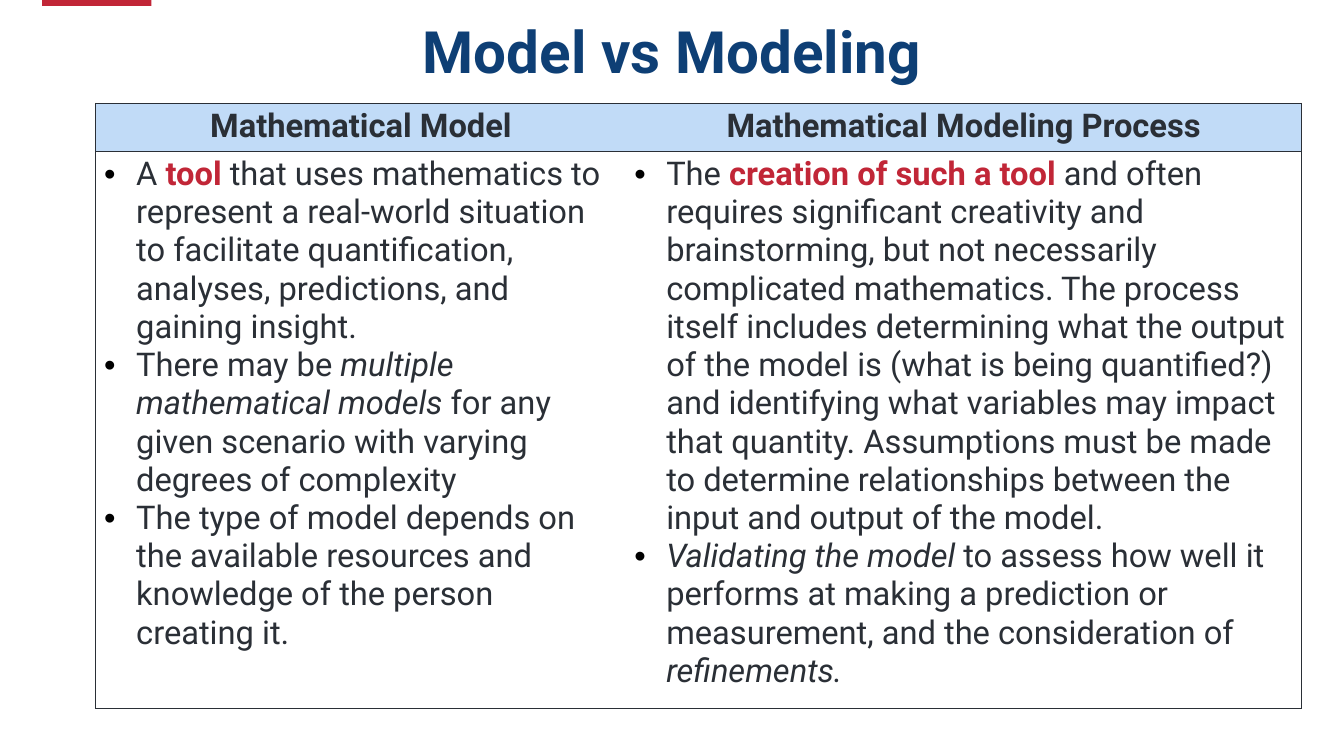
from dataclasses import dataclass

from lxml.etree import SubElement
from pptx import Presentation
from pptx.dml.color import RGBColor
from pptx.enum.shapes import MSO_SHAPE
from pptx.enum.text import MSO_ANCHOR, PP_ALIGN
from pptx.oxml.ns import qn
from pptx.slide import Slide
from pptx.table import _Cell
from pptx.text.text import _Paragraph
from pptx.util import Inches, Pt

SLIDE_WIDTH = Inches(16)
SLIDE_HEIGHT = Inches(9)


@dataclass(frozen=True)
class Theme:
    font: str = "Roboto"
    title_size: int = 50
    table_size: int = 28
    border_width: int = 1
    navy: str = "0E3F75"
    ink: str = "2A2F36"
    red: str = "C12637"
    header: str = "C1DBF7"
    white: str = "FFFFFF"
    bullet: str = "000000"


THEME = Theme()


@dataclass(frozen=True)
class Band:
    left: float
    top: float
    width: float
    height: float
    color: str


@dataclass(frozen=True)
class Phrase:
    text: str
    color: str = THEME.ink
    bold: bool = False
    italic: bool = False


@dataclass(frozen=True)
class Concept:
    heading: str
    width: float
    outer_side: str
    points: list[list[Phrase]]


BANDS = [
    Band(3.13, -0.56, 8.13, 1.33, THEME.red),
    Band(0, 90, 100, 10, THEME.white),
]
TABLE_LEFT, TABLE_TOP = 7.13, 13.67
HEADING_HEIGHT, POINTS_HEIGHT = 6.22, 70.11
HANGING_INDENT = 2.38

CONCEPTS = [
    Concept("Mathematical Model", 39.44, "lnL", [
        [
            Phrase("A "),
            Phrase("tool ", color=THEME.red, bold=True),
            Phrase("that uses mathematics to represent a real-world situation to facilitate "
                   "quantification, analyses, predictions, and gaining insight."),
        ],
        [
            Phrase("There may be "),
            Phrase("multiple mathematical models ", italic=True),
            Phrase("for any given scenario with varying degrees of complexity"),
        ],
        [Phrase("The type of model depends on the available resources and knowledge "
                "of the person creating it.")],
    ]),
    Concept("Mathematical Modeling Process", 50.25, "lnR", [
        [
            Phrase("The "),
            Phrase("creation of such a tool ", color=THEME.red, bold=True),
            Phrase("and often requires significant creativity and brainstorming, but not "
                   "necessarily complicated mathematics. The process itself includes "
                   "determining what the output of the model is (what is being quantified?) "
                   "and identifying what variables may impact that quantity. Assumptions must "
                   "be made to determine relationships between the input and output of the model."),
        ],
        [
            Phrase("Validating the model ", italic=True),
            Phrase("to assess how well it performs at making a prediction or measurement, "
                   "and the consideration of "),
            Phrase("refinements.", italic=True),
        ],
    ]),
]


def across(percent: float) -> int:
    return round(SLIDE_WIDTH * percent / 100)


def down(percent: float) -> int:
    return round(SLIDE_HEIGHT * percent / 100)


def write(paragraph: _Paragraph, text: str, *, size: int = THEME.table_size,
          color: str = THEME.ink, bold: bool = False, italic: bool = False) -> None:
    run = paragraph.add_run()
    run.text = text
    run.font.name = THEME.font
    run.font.size = Pt(size)
    run.font.bold = bold
    run.font.italic = italic
    run.font.color.rgb = RGBColor.from_string(color)


def draw_band(slide: Slide, band: Band) -> None:
    strip = slide.shapes.add_shape(MSO_SHAPE.RECTANGLE, across(band.left), down(band.top),
                                   across(band.width), down(band.height))
    strip.shadow.inherit = False
    strip.fill.solid()
    strip.fill.fore_color.rgb = RGBColor.from_string(band.color)
    strip.line.fill.background()


def draw_title(slide: Slide, text: str) -> None:
    title = slide.shapes.add_textbox(across(16.25), down(2.56), across(67.5), down(9.44))
    frame = title.text_frame
    frame.word_wrap = True
    frame.vertical_anchor = MSO_ANCHOR.MIDDLE
    frame.margin_left = frame.margin_right = Inches(0.12)
    frame.margin_top = frame.margin_bottom = Inches(0.06)
    paragraph = frame.paragraphs[0]
    paragraph.alignment = PP_ALIGN.CENTER
    paragraph.line_spacing = 0.9
    write(paragraph, text, size=THEME.title_size, color=THEME.navy, bold=True)


def set_borders(cell: _Cell, visible: set[str]) -> None:
    properties = cell._tc.get_or_add_tcPr()
    for side in ("lnL", "lnR", "lnT", "lnB"):
        border = SubElement(properties, qn(f"a:{side}"), w=str(Pt(THEME.border_width)))
        if side in visible:
            fill = SubElement(border, qn("a:solidFill"))
            SubElement(fill, qn("a:srgbClr"), val=THEME.ink)
        else:
            SubElement(border, qn("a:noFill"))


def add_bullet(paragraph: _Paragraph) -> None:
    properties = paragraph._p.get_or_add_pPr()
    properties.set("marL", str(across(HANGING_INDENT)))
    properties.set("indent", str(-across(HANGING_INDENT)))
    bullet_color = SubElement(properties, qn("a:buClr"))
    SubElement(bullet_color, qn("a:srgbClr"), val=THEME.bullet)
    SubElement(properties, qn("a:buFont"), typeface="Arial")
    SubElement(properties, qn("a:buChar"), char="•")


def fill_heading(cell: _Cell, heading: str) -> None:
    cell.fill.solid()
    cell.fill.fore_color.rgb = RGBColor.from_string(THEME.header)
    paragraph = cell.text_frame.paragraphs[0]
    paragraph.alignment = PP_ALIGN.CENTER
    write(paragraph, heading, bold=True)


def fill_points(cell: _Cell, points: list[list[Phrase]]) -> None:
    cell.fill.background()
    frame = cell.text_frame
    for index, phrases in enumerate(points):
        paragraph = frame.add_paragraph() if index else frame.paragraphs[0]
        add_bullet(paragraph)
        for phrase in phrases:
            write(paragraph, phrase.text, color=phrase.color,
                  bold=phrase.bold, italic=phrase.italic)


def draw_comparison(slide: Slide, concepts: list[Concept]) -> None:
    comparison = slide.shapes.add_table(
        2, len(concepts), across(TABLE_LEFT), down(TABLE_TOP),
        across(sum(concept.width for concept in concepts)),
        down(HEADING_HEIGHT + POINTS_HEIGHT)).table
    comparison.first_row = False
    comparison.horz_banding = False
    for row, height in zip(comparison.rows, (HEADING_HEIGHT, POINTS_HEIGHT)):
        row.height = down(height)
    for column, concept in enumerate(concepts):
        comparison.columns[column].width = across(concept.width)
        heading, points = (comparison.cell(row, column) for row in range(2))
        for cell in (heading, points):
            set_borders(cell, {concept.outer_side, "lnT", "lnB"})
        fill_heading(heading, concept.heading)
        fill_points(points, concept.points)


def main() -> None:
    deck = Presentation()
    deck.slide_width = SLIDE_WIDTH
    deck.slide_height = SLIDE_HEIGHT
    slide = deck.slides.add_slide(deck.slide_layouts[6])
    for band in BANDS:
        draw_band(slide, band)
    draw_title(slide, "Model vs Modeling")
    draw_comparison(slide, CONCEPTS)
    deck.save("out.pptx")


if __name__ == "__main__":
    main()
